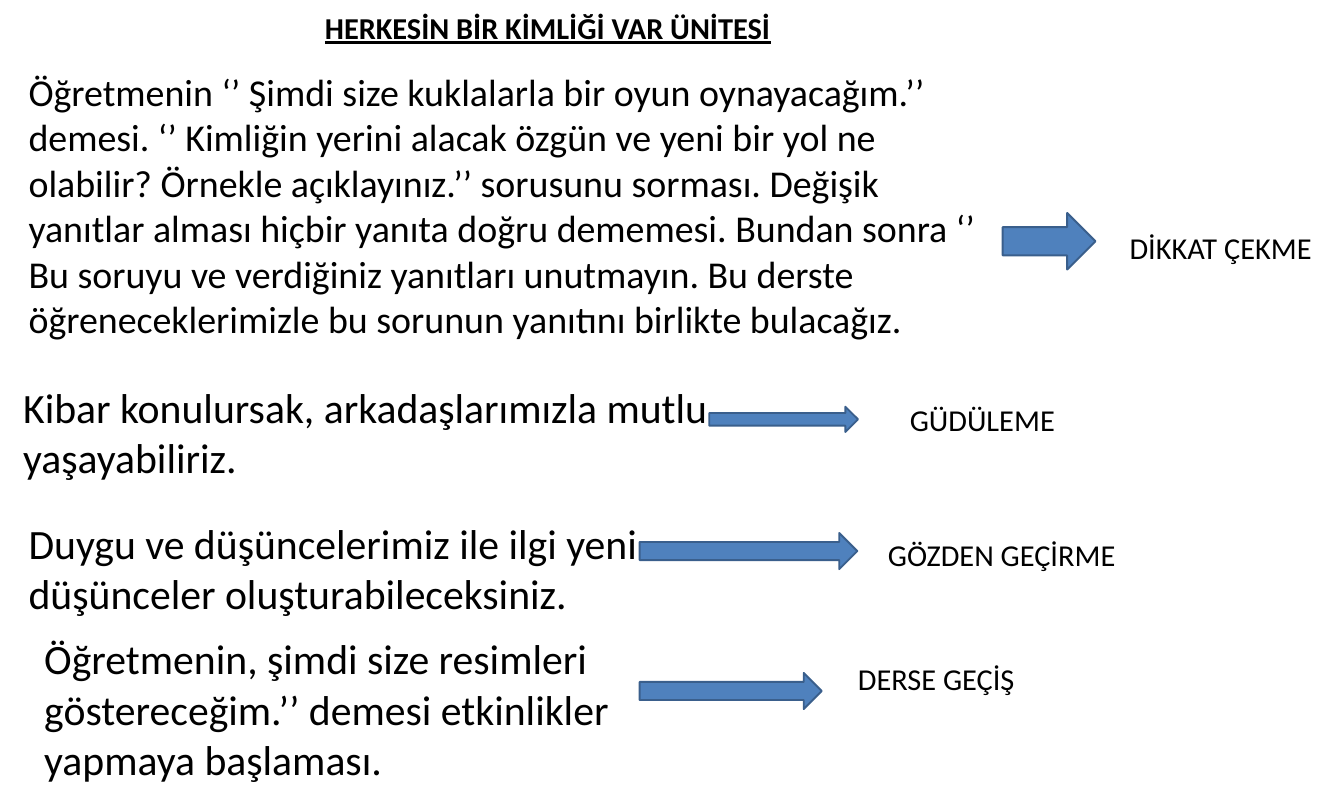
from dataclasses import dataclass

from pptx import Presentation
from pptx.dml.color import RGBColor
from pptx.enum.shapes import MSO_SHAPE
from pptx.enum.text import MSO_ANCHOR, MSO_AUTO_SIZE, PP_ALIGN
from pptx.util import Inches, Pt


@dataclass(frozen=True)
class Theme:
    font: str = "Calibri"
    ink: RGBColor = RGBColor(0x00, 0x00, 0x00)
    paper: RGBColor = RGBColor(0xFF, 0xFF, 0xFF)
    arrow_fill: RGBColor = RGBColor(0x4F, 0x81, 0xBD)
    arrow_line: RGBColor = RGBColor(0x3A, 0x5F, 0x8C)
    arrow_line_width: int = 2
    title_size: int = 32
    label_size: int = 32
    story_size: int = 40
    example_size: int = 44


class LessonPage:
    def __init__(self, deck, theme):
        self.theme = theme
        self.page = deck.slides.add_slide(deck.slide_layouts[5])
        self.page.background.fill.solid()
        self.page.background.fill.fore_color.rgb = theme.paper

    def set_text(self, frame, text, size):
        frame.word_wrap = True
        frame.vertical_anchor = MSO_ANCHOR.TOP
        para = frame.paragraphs[0]
        para.text = text
        para.alignment = PP_ALIGN.LEFT
        para.font.name = self.theme.font
        para.font.size = Pt(size)
        para.font.color.rgb = self.theme.ink
        return para

    def title(self, text, left, top, width, height):
        box = self.page.shapes.title
        box.left, box.top = Inches(left), Inches(top)
        box.width, box.height = Inches(width), Inches(height)
        para = self.set_text(box.text_frame, text, self.theme.title_size)
        box.text_frame.auto_size = MSO_AUTO_SIZE.NONE
        para.font.bold = True
        para.font.underline = True

    def text(self, text, size, place):
        box = self.page.shapes.add_textbox(*map(Inches, place))
        self.set_text(box.text_frame, text, size)
        box.text_frame.auto_size = MSO_AUTO_SIZE.SHAPE_TO_FIT_TEXT

    def arrow(self, place):
        arrow = self.page.shapes.add_shape(MSO_SHAPE.RIGHT_ARROW, *map(Inches, place))
        arrow.shadow.inherit = False
        arrow.fill.solid()
        arrow.fill.fore_color.rgb = self.theme.arrow_fill
        arrow.line.color.rgb = self.theme.arrow_line
        arrow.line.width = Pt(self.theme.arrow_line_width)

    def step(self, example, size, example_place, arrow_place, label, label_place):
        """Add an example, its arrow and the lesson stage it belongs to."""
        self.text(example, size, example_place)
        self.arrow(arrow_place)
        self.text(label, self.theme.label_size, label_place)


def main():
    deck = Presentation()
    deck.slide_width, deck.slide_height = Inches(19.69), Inches(11.81)
    theme = Theme()
    lesson = LessonPage(deck, theme)
    lesson.title("HERKESİN BİR KİMLİĞİ VAR ÜNİTESİ", 4.66, 0.08, 10, 0.75)

    steps = [
        ("Öğretmenin ‘’ Şimdi size kuklalarla bir oyun oynayacağım.’’ demesi. "
         "‘’ Kimliğin yerini alacak özgün ve yeni bir yol ne olabilir? "
         "Örnekle açıklayınız.’’ sorusunu sorması. Değişik yanıtlar alması "
         "hiçbir yanıta doğru dememesi. Bundan sonra ‘’ Bu soruyu ve "
         "verdiğiniz yanıtları unutmayın. Bu derste öğreneceklerimizle bu "
         "sorunun yanıtını birlikte bulacağız.",
         theme.story_size, (0.32, 0.95, 14.17, 4.14), (14.69, 3.12, 1.36, 0.83),
         "DİKKAT ÇEKME", (16.45, 3.31, 3.24, 0.64)),
        ("Kibar konulursak, arkadaşlarımızla mutlu yaşayabiliriz.",
         theme.example_size, (0.24, 5.54, 10.55, 1.58), (10.39, 5.96, 2.18, 0.37),
         "GÜDÜLEME", (13.23, 5.83, 4.72, 0.64)),
        ("Duygu ve düşüncelerimiz ile ilgi yeni düşünceler oluşturabileceksiniz.",
         theme.example_size, (0.32, 7.54, 10.55, 1.58), (9.37, 7.81, 3.19, 0.53),
         "GÖZDEN GEÇİRME", (12.91, 7.81, 3.54, 0.64)),
        ("Öğretmenin, şimdi size resimleri göstereceğim.’’ demesi etkinlikler "
         "yapmaya başlaması.",
         theme.example_size, (0.55, 9.23, 9.37, 2.32), (9.37, 9.86, 2.67, 0.53),
         "DERSE GEÇİŞ", (12.47, 9.63, 5.39, 0.64)),
    ]
    for step in steps:
        lesson.step(*step)
    deck.save("out.pptx")


if __name__ == "__main__":
    main()
